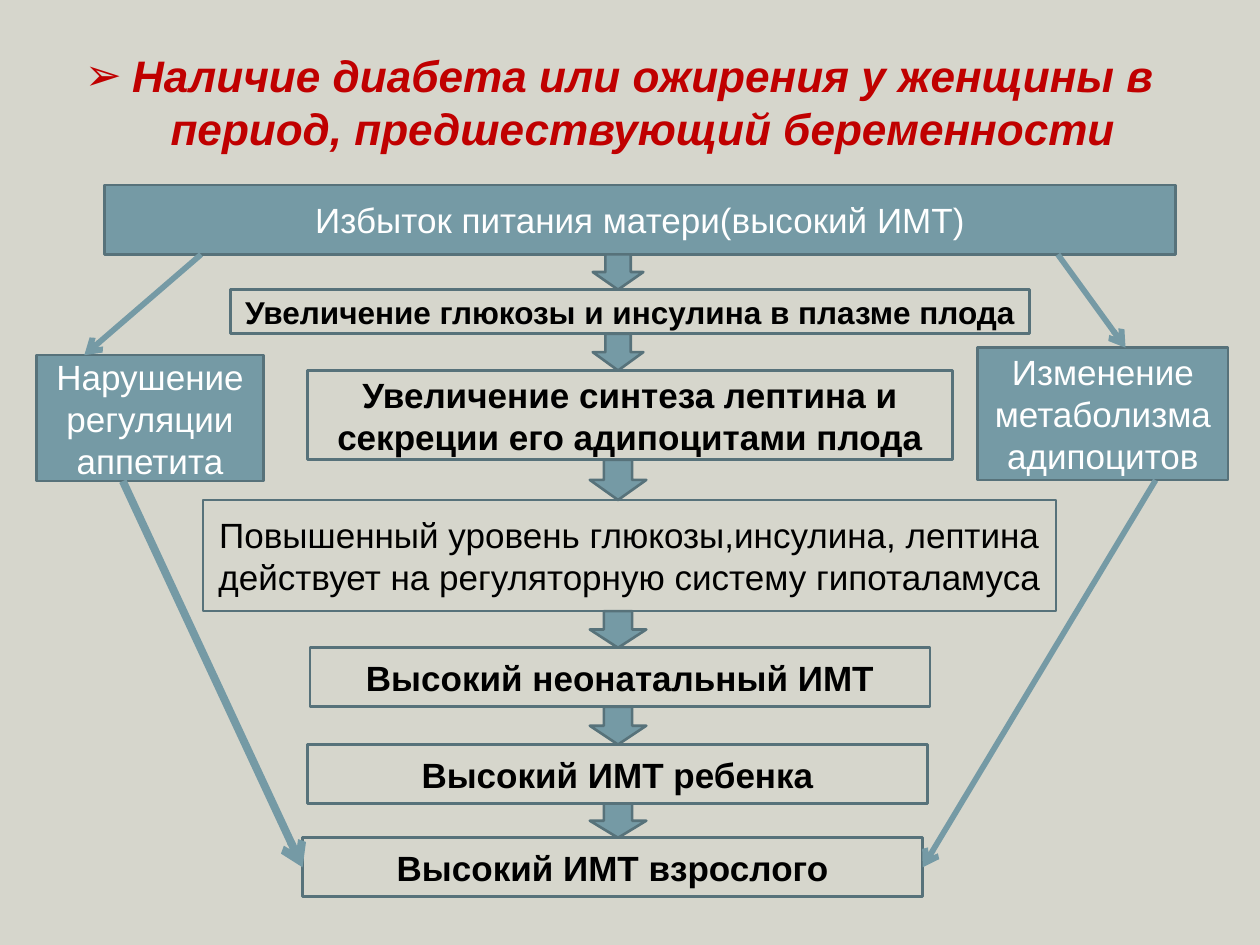
from dataclasses import dataclass
from itertools import pairwise

from lxml.etree import SubElement
from pptx import Presentation
from pptx.dml.color import RGBColor
from pptx.enum.shapes import MSO_CONNECTOR as Connector, MSO_SHAPE as Shape
from pptx.enum.text import MSO_ANCHOR as Anchor, MSO_AUTO_SIZE as AutoSize, PP_ALIGN as Align
from pptx.oxml.ns import qn
from pptx.util import Cm, Pt

BACKGROUND = RGBColor(0xD6, 0xD6, 0xCC)
TEAL = RGBColor(0x75, 0x9A, 0xA5)
DARK_TEAL = RGBColor(0x57, 0x72, 0x7A)
RED = RGBColor(0xC0, 0x00, 0x00)
WHITE = RGBColor(0xFF, 0xFF, 0xFF)
BLACK = RGBColor(0x00, 0x00, 0x00)
FONT = "Arial"


@dataclass
class Box:
    left: float
    top: float
    width: float
    height: float

    @property
    def bottom(self):
        return self.top + self.height

    def point(self, across, down):
        return self.left + across * self.width, self.top + down * self.height

    def inner(self, left, top, width, height):
        return Box(self.left + left, self.top + top, width, height)

    def lengths(self):
        return [Cm(value) for value in (self.left, self.top, self.width, self.height)]


def write(frame, text, size, color, bold=False, italic=False):
    frame.text = text
    frame.word_wrap = True
    frame.auto_size = AutoSize.NONE
    frame.vertical_anchor = Anchor.MIDDLE
    para = frame.paragraphs[0]
    para.alignment = Align.CENTER
    font = para.runs[0].font
    font.name, font.size, font.bold, font.italic = FONT, Pt(size), bold, italic
    font.color.rgb = color
    return para


def add_block(page, box, kind=Shape.RECTANGLE, filled=True):
    block = page.shapes.add_shape(kind, *box.lengths())
    block.shadow.inherit = False
    if filled:
        block.fill.solid()
        block.fill.fore_color.rgb = TEAL
    else:
        block.fill.background()
    block.line.color.rgb = DARK_TEAL
    block.line.width = Pt(1.5)
    return block


def add_link(page, start, end, width=3.25):
    link = page.shapes.add_connector(Connector.STRAIGHT, *[Cm(value) for value in start + end])
    link.line.color.rgb = TEAL
    link.line.width = Pt(width)
    SubElement(link.line._get_or_add_ln(), qn("a:tailEnd"), type="arrow")
    SubElement(link._element.spPr, qn("a:effectLst"))


def fill_title(page, box):
    title = page.shapes.title
    title.left, title.top, title.width, title.height = box.lengths()
    para = write(
        title.text_frame,
        "Наличие диабета или ожирения у женщины в период, предшествующий беременности",
        25.2, RED, bold=True, italic=True,
    )
    properties = para._p.get_or_add_pPr()
    properties.set("marL", str(Cm(0.95)))
    properties.set("indent", str(-Cm(0.95)))
    SubElement(properties, qn("a:buFont"), typeface=FONT)
    SubElement(properties, qn("a:buChar"), char="➢")


def add_cause(page, box):
    block = add_block(page, box)
    write(block.text_frame, "Избыток питания матери(высокий ИМТ)", 20, WHITE)
    return box


def add_chain(page, area, cause):
    steps = [
        ("Увеличение глюкозы и инсулина в плазме плода", 18, True, (0.56, 0, 16.1, 0.89)),
        ("Увеличение синтеза лептина и секреции его адипоцитами плода", 20, True,
         (2.11, 1.63, 13, 1.8)),
        ("Повышенный уровень глюкозы,инсулина, лептина действует на регуляторную систему гипоталамуса",
         20, False, (0, 4.24, 17.2, 2.24)),
        ("Высокий неонатальный ИМТ", 20, True, (2.16, 7.22, 12.5, 1.19)),
        ("Высокий ИМТ ребенка", 20, True, (2.11, 9.17, 12.5, 1.19)),
        ("Высокий ИМТ взрослого", 20, True, (2.01, 11.05, 12.5, 1.19)),
    ]
    boxes = [cause]
    for text, size, bold, place in steps:
        box = area.inner(*place)
        block = add_block(page, box, filled=False)
        write(block.text_frame, text, size, BLACK, bold)
        boxes.append(box)
    axis = area.left + 8.37
    for index, (upper, lower) in enumerate(pairwise(boxes)):
        width = 1.02 if index < 2 else 1.14
        gap = Box(axis - width / 2, upper.bottom, width, lower.top - upper.bottom)
        add_block(page, gap, Shape.DOWN_ARROW)
    return boxes[-1]


def add_branch(page, box, text, inlet, outlet, start, end, width):
    block = add_block(page, box)
    write(block.text_frame, text, 20, WHITE)
    add_link(page, start, box.point(inlet, 0))
    add_link(page, box.point(outlet, 1), end, width)


def main():
    deck = Presentation()
    deck.slide_width, deck.slide_height = Cm(25.4), Cm(19.05)
    page = deck.slides.add_slide(deck.slide_layouts[5])
    page.background.fill.solid()
    page.background.fill.fore_color.rgb = BACKGROUND

    fill_title(page, Box(1.27, 0.76, 22.43, 2.57))
    cause = add_cause(page, Box(2.11, 3.73, 21.59, 1.4))
    outcome = add_chain(page, Box(4.09, 5.84, 17.2, 12.24), cause)
    add_branch(page, Box(0.74, 7.16, 4.57, 2.54), "Нарушение регуляции аппетита",
               0.21, 0.38, cause.point(0.09, 1), outcome.point(0, 0.5), 4.5)
    add_branch(page, Box(19.71, 7.01, 5.05, 2.67), "Изменение метаболизма адипоцитов",
               0.59, 0.71, cause.point(0.89, 1), outcome.point(1, 0.5), 3.25)
    deck.save("out.pptx")


if __name__ == "__main__":
    main()
